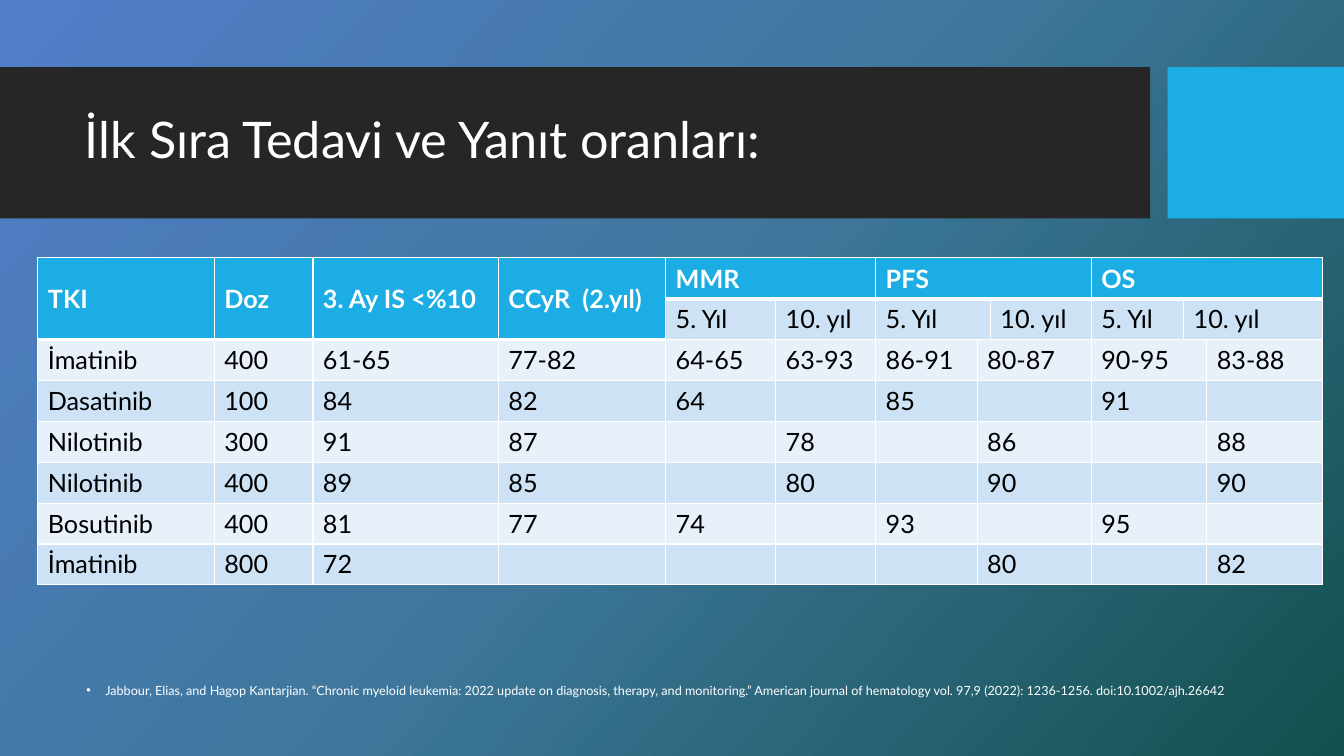
from copy import deepcopy

from lxml import etree
from pptx import Presentation
from pptx.dml.color import RGBColor
from pptx.enum.shapes import MSO_SHAPE
from pptx.enum.text import MSO_ANCHOR, MSO_AUTO_SIZE, PP_ALIGN
from pptx.oxml.ns import qn
from pptx.util import Pt

RECT = MSO_SHAPE.RECTANGLE
MIDDLE, TOP = MSO_ANCHOR.MIDDLE, MSO_ANCHOR.TOP
LEFT = PP_ALIGN.LEFT
GROW = MSO_AUTO_SIZE.SHAPE_TO_FIT_TEXT

FONT = "Lato"
WHITE, BLACK, DARK, BLUE = "FFFFFF", "000000", "262626", "1CADE4"
BANDS = "E8F1FA", "CDE3F5"
STOPS = [(0, "527ECA"), (0.5, "3E779B"), (1, "12504E")]

TITLE = "İlk Sıra Tedavi ve Yanıt oranları:"
CITE = (
    "Jabbour, Elias, and Hagop Kantarjian. “Chronic myeloid leukemia: 2022 update "
    "on diagnosis, therapy, and monitoring.” American journal of hematology "
    "vol. 97,9 (2022): 1236-1256. doi:10.1002/ajh.26642"
)
BARS = [((0, 48, 821.5, 108), DARK), ((834, 48, 126, 108), BLUE)]

HEAD = ["TKI", "Doz", "3. Ay IS <%10", "CCyR  (2.yıl)", "MMR", "PFS", "OS"]
YEARS = ["5. Yıl", "10. yıl"] * 3
DRUGS = [
    ["İmatinib", "400", "61-65", "77-82", "64-65", "63-93", "86-91", "80-87", "90-95", "83-88"],
    ["Dasatinib", "100", "84", "82", "64", "", "85", "", "91", ""],
    ["Nilotinib", "300", "91", "87", "", "78", "", "86", "", "88"],
    ["Nilotinib", "400", "89", "85", "", "80", "", "90", "", "90"],
    ["Bosutinib", "400", "81", "77", "74", "", "93", "", "95", ""],
    ["İmatinib", "800", "72", "", "", "", "", "80", "", "82"],
]
WIDTHS = [126, 70.5, 132.5, 119.5, 78.5, 71.5, 72.5, 9.5, 72, 66, 16.5, 82.5]
ROW = 29.2
TALL = 4  # leading columns whose heading fills both heading rows

# Each row: its texts and the grid column where each cell starts
ROWS = [(HEAD, [0, 1, 2, 3, 4, 6, 9]), (YEARS, [4, 5, 6, 8, 9, 10])]
ROWS += [(drug, [0, 1, 2, 3, 4, 5, 6, 7, 9, 11]) for drug in DRUGS]


def color(code):
    return RGBColor.from_string(code)


def write(frame, text, size=18, ink=BLACK, bold=False, space=None):
    para = frame.paragraphs[0]
    para.alignment = LEFT
    if space:
        para.line_spacing = space
    run = para.add_run()
    run.text = text
    font = run.font
    font.name, font.size, font.bold = FONT, Pt(size), bold
    font.color.rgb = color(ink)
    return para


def is_head(row, col):
    return row == 0 or (row == 1 and col < TALL)


def edge(cell, side, width):
    """Draw one white border of a cell."""
    props = cell._tc.get_or_add_tcPr()
    line = etree.SubElement(props, qn("a:ln" + side), w=str(Pt(width)))
    fill = etree.SubElement(line, qn("a:solidFill"))
    etree.SubElement(fill, qn("a:srgbClr"), val=WHITE)


def paint(cell, row, col):
    """Give a cell its borders and fill."""
    head = is_head(row, col)
    under = not head and is_head(row - 1, col)
    for side, width in zip("LRTB", (1, 1, 3 if under else 1, 3 if head else 1)):
        edge(cell, side, width)
    cell.fill.solid()
    cell.fill.fore_color.rgb = color(BLUE if head else BANDS[row % 2])


def add_bg(slide):
    fill = slide.background.fill
    fill.gradient()
    fill.gradient_angle = 360 - 42
    stops = next(slide.element.iter(qn("a:gsLst")))
    stops.append(deepcopy(stops[0]))
    for stop, (pos, code) in zip(fill.gradient_stops, STOPS):
        stop.position = pos
        stop.color.rgb = color(code)


def add_title(slide):
    for box, code in BARS:
        bar = slide.shapes.add_shape(RECT, *map(Pt, box))
        bar.shadow.inherit = False
        bar.fill.solid()
        bar.fill.fore_color.rgb = color(code)
        bar.line.fill.background()
    title = slide.shapes.title
    title.element.getparent().append(title.element)  # in front of the bars
    title.left, title.top, title.width, title.height = map(Pt, (53.5, 59, 757, 85))
    title.text_frame.vertical_anchor = MIDDLE
    write(title.text_frame, TITLE, size=36, ink=WHITE, space=0.9)


def add_rates(slide):
    count, last = len(ROWS), len(WIDTHS) - 1
    box = map(Pt, (27, 184.2, sum(WIDTHS), ROW * count))
    table = slide.shapes.add_table(count, len(WIDTHS), *box).table
    table.horz_banding = False
    for col, width in enumerate(WIDTHS):
        table.columns[col].width = Pt(width)
    for row, (texts, starts) in enumerate(ROWS):
        table.rows[row].height = Pt(ROW)
        for col in range(len(WIDTHS)):
            paint(table.cell(row, col), row, col)
        ends = [start - 1 for start in starts[1:]] + [last]
        for text, col, end in zip(texts, starts, ends):
            cell = table.cell(row, col)
            low = 1 if is_head(row, col) and col < TALL else row
            if (low, end) != (row, col):
                cell.merge(table.cell(low, end))
            cell.vertical_anchor = MIDDLE if row < 2 else TOP
            if text:
                head = is_head(row, col)
                write(cell.text_frame, text, ink=WHITE if head else BLACK, bold=head)


def add_cite(slide):
    box = slide.shapes.add_textbox(*map(Pt, (54.7, 484, 828, 28.8)))
    frame = box.text_frame
    frame.word_wrap = True
    frame.auto_size = GROW
    props = write(frame, CITE, size=9, ink=WHITE)._p.get_or_add_pPr()
    props.set("marL", str(Pt(13.5)))
    props.set("indent", str(Pt(-13.5)))
    etree.SubElement(props, qn("a:buFont"), typeface="Arial")
    etree.SubElement(props, qn("a:buChar"), char="•")


def main():
    deck = Presentation()
    deck.slide_width, deck.slide_height = Pt(960), Pt(540)
    slide = deck.slides.add_slide(deck.slide_layouts[5])
    add_bg(slide)
    add_title(slide)
    add_rates(slide)
    add_cite(slide)
    deck.save("out.pptx")


if __name__ == "__main__":
    main()
